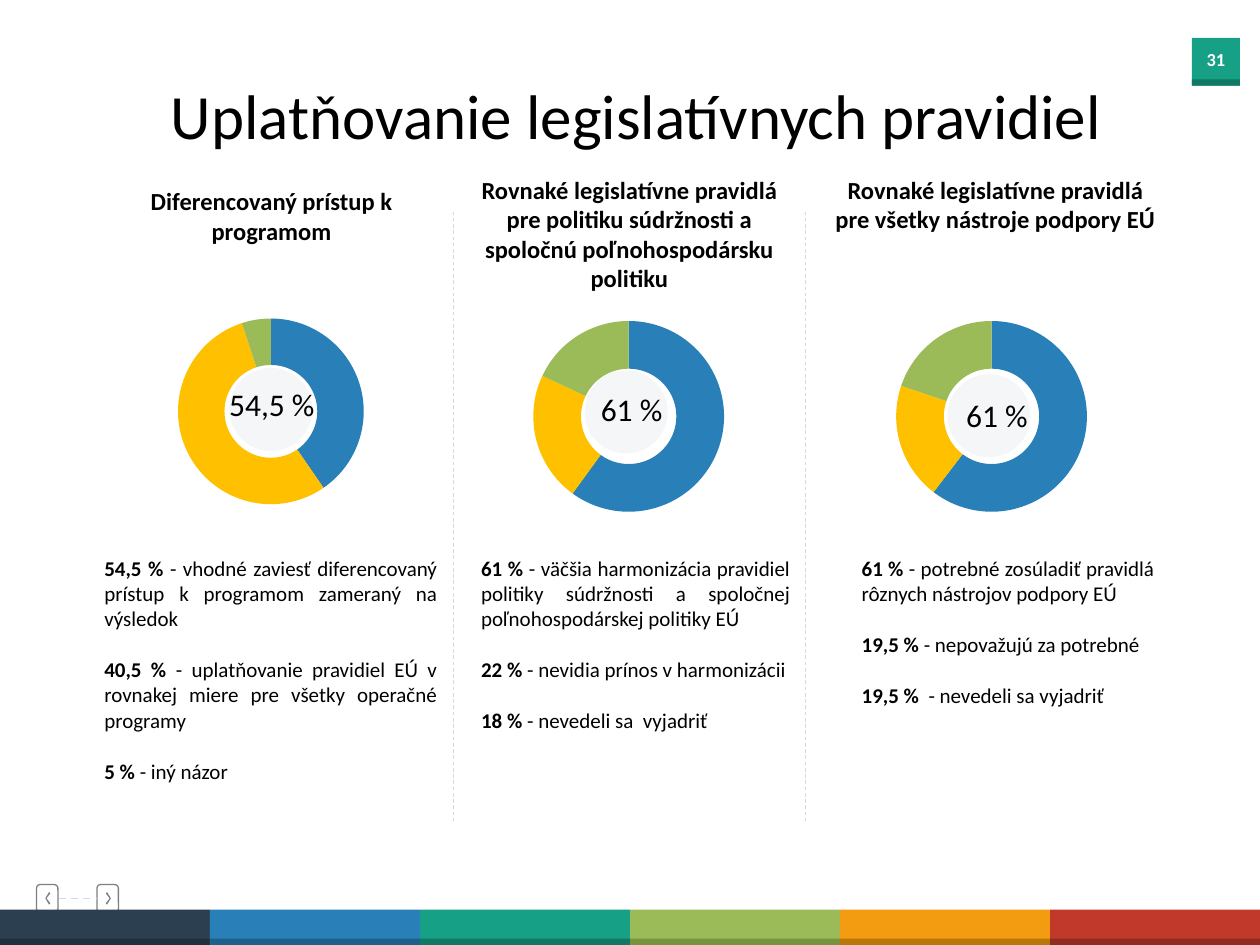
"""Build the slide on applying legislative rules: three doughnuts with findings."""
from lxml.etree import SubElement
from pptx import Presentation
from pptx.chart.data import CategoryChartData
from pptx.dml.color import RGBColor
from pptx.enum.chart import XL_CHART_TYPE
from pptx.enum.dml import MSO_LINE
from pptx.enum.shapes import MSO_CONNECTOR, MSO_SHAPE
from pptx.enum.text import MSO_ANCHOR, MSO_AUTO_SIZE, PP_ALIGN
from pptx.oxml.ns import qn
from pptx.util import Inches, Pt

BLACK = RGBColor(0x00, 0x00, 0x00)
WHITE = RGBColor(0xFF, 0xFF, 0xFF)
GREY = RGBColor(0x80, 0x80, 0x80)
PALE = RGBColor(0xD9, 0xD9, 0xD9)
SLATE = RGBColor(0x44, 0x54, 0x6A)
NAVY = RGBColor(0x2C, 0x3F, 0x50)
BLUE = RGBColor(0x29, 0x80, 0xB9)
TEAL = RGBColor(0x16, 0xA0, 0x85)
GREEN = RGBColor(0x9B, 0xBB, 0x59)
ORANGE = RGBColor(0xF3, 0x9C, 0x12)
RED = RGBColor(0xC0, 0x39, 0x2B)
YELLOW = RGBColor(0xFF, 0xC0, 0x00)
DARK_NAVY = RGBColor(0x21, 0x2F, 0x3C)
DARK_BLUE = RGBColor(0x1F, 0x60, 0x8B)
DARK_TEAL = RGBColor(0x10, 0x78, 0x64)
DARK_GREEN = RGBColor(0x77, 0x93, 0x3C)
DARK_ORANGE = RGBColor(0xBA, 0x76, 0x09)
DARK_RED = RGBColor(0x90, 0x2B, 0x20)

STRIPES = [(NAVY, DARK_NAVY), (BLUE, DARK_BLUE), (TEAL, DARK_TEAL),
           (GREEN, DARK_GREEN), (ORANGE, DARK_ORANGE), (RED, DARK_RED)]
CHEVRON = [(0.4, 7.09), (0.37, 7.13), (0.4, 7.17), (0.39, 7.18), (0.36, 7.13), (0.39, 7.08)]
DIVIDERS = [(3.6, 1.68, 3.6, 6.52, 0.5), (6.39, 1.68, 6.39, 6.52, 0.5),
            (0.47, 7.13, 0.77, 7.13, 1)]

COLUMNS = [
    {"heading": "Diferencovaný prístup k programom", "heading_box": (0.97, 1.43, 2.37, 0.57),
     "shares": (40, 54, 5), "chart_box": (1.2, 2.39, 1.9, 1.75),
     "disc_box": (1.82, 2.92, 0.66, 0.66),
     "label": "54,5 %", "label_box": (1.72, 3.01, 0.89, 0.4),
     "findings_box": (0.73, 4.36, 2.84, 1.92),
     "findings": [
         ("54,5 % ", "- vhodné zaviesť diferencovaný prístup k programom zameraný na výsledok"),
         ("40,5 % ", "- uplatňovanie pravidiel EÚ v rovnakej miere pre všetky operačné programy "),
         ("5 % ", "- iný názor")]},
    {"heading": "Rovnaké legislatívne pravidlá pre politiku súdržnosti a spoločnú "
                "poľnohospodársku politiku", "heading_box": (3.6, 1.34, 2.79, 0.81),
     "shares": (60, 22, 18), "chart_box": (4.05, 2.41, 1.88, 1.79),
     "disc_box": (4.64, 2.94, 0.66, 0.66),
     "label": "61 %", "label_box": (4.67, 3.05, 0.7, 0.4),
     "findings_box": (3.72, 4.36, 2.65, 1.51),
     "findings": [
         ("61 % ", "- väčšia harmonizácia pravidiel politiky súdržnosti a spoločnej "
                   "poľnohospodárskej politiky EÚ "),
         ("22 % ", "- nevidia prínos v harmonizácii"),
         ("18 % ", "- nevedeli sa  vyjadriť")]},
    {"heading": "Rovnaké legislatívne pravidlá pre všetky nástroje podpory EÚ",
     "heading_box": (6.48, 1.34, 2.84, 0.57),
     "shares": (61, 20, 20), "chart_box": (6.93, 2.41, 1.88, 1.79),
     "disc_box": (7.52, 2.97, 0.66, 0.66),
     "label": "61 %", "label_box": (7.57, 3.09, 0.7, 0.4),
     "findings_box": (6.74, 4.36, 2.52, 1.31),
     "findings": [
         ("61 % ", "- potrebné zosúladiť pravidlá rôznych nástrojov podpory EÚ"),
         ("19,5 % ", "- nepovažujú za potrebné"),
         ("19,5 % ", " - nevedeli sa vyjadriť")]},
]


def write(holder, paragraphs, size, align, color=BLACK, wrap=True):
    frame_format = {"word_wrap": wrap, "auto_size": MSO_AUTO_SIZE.NONE,
                    "vertical_anchor": MSO_ANCHOR.TOP}
    for name, value in frame_format.items():
        setattr(holder.text_frame, name, value)
    for index, runs in enumerate(paragraphs):
        frame = holder.text_frame
        paragraph = frame.add_paragraph() if index else frame.paragraphs[0]
        paragraph.alignment = align
        paragraph.space_before = Pt(14.65 if index else 0)
        for words, bold in runs:
            run = paragraph.add_run()
            run.text = words
            run.font.color.rgb = color
            for name, value in {"name": "Calibri", "size": Pt(size), "bold": bold}.items():
                setattr(run.font, name, value)


def paint(shape, color):
    shape.shadow.inherit = False
    shape.fill.solid()
    shape.fill.fore_color.rgb = color
    shape.line.fill.background()


deck = Presentation()
deck.slide_width, deck.slide_height = Inches(10), Inches(7.5)
slide = deck.slides.add_slide(deck.slide_layouts[5])
shapes = slide.shapes

title = shapes.title
title_place = {"left": 1.22, "top": 0.56, "width": 7.66, "height": 0.71}
for side, length in title_place.items():
    setattr(title, side, Inches(length))
write(title, [[("Uplatňovanie legislatívnych pravidiel", False)]], 36, PP_ALIGN.CENTER, wrap=False)

for top, height, color in [(0.3, 0.38, TEAL), (0.63, 0.05, DARK_TEAL)]:
    badge = shapes.add_shape(MSO_SHAPE.RECTANGLE, Inches(9.46), Inches(top),
                             Inches(0.38), Inches(height))
    paint(badge, color)
page_number = shapes.add_textbox(Inches(9.46), Inches(0.33), Inches(0.38), Inches(0.28))
write(page_number, [[("31", True)]], 10.5, PP_ALIGN.CENTER, WHITE, wrap=False)

for button_left, mirrored in [(0.29, False), (0.77, True)]:
    button = shapes.add_shape(MSO_SHAPE.ROUNDED_RECTANGLE, Inches(button_left), Inches(7.02),
                              Inches(0.17), Inches(0.22))
    button.shadow.inherit = False
    button.fill.background()
    button.line.color.rgb = GREY
    button.line.width = Pt(0.75)
    points = [(Inches(1.24 - x if mirrored else x), Inches(y)) for x, y in CHEVRON]
    outline = shapes.build_freeform(*points[0])
    outline.add_line_segments(points[1:], close=True)
    paint(outline.convert_to_shape(), GREY)

for x1, y1, x2, y2, weight in DIVIDERS:
    divider = shapes.add_connector(MSO_CONNECTOR.STRAIGHT, *map(Inches, (x1, y1, x2, y2)))
    divider.line.color.rgb = PALE
    divider.line.width = Pt(weight)
    divider.line.dash_style = MSO_LINE.DASH
    SubElement(divider._element.spPr, qn("a:effectLst"))

for column in COLUMNS:
    heading = shapes.add_textbox(*map(Inches, column["heading_box"]))
    write(heading, [[(column["heading"], True)]], 14, PP_ALIGN.CENTER)

    shares = CategoryChartData()
    shares.categories = ["1", "2", "3"]
    shares.add_series("Series 1", column["shares"])
    chart = shapes.add_chart(XL_CHART_TYPE.DOUGHNUT, *map(Inches, column["chart_box"]),
                             shares).chart
    chart.has_title = chart.has_legend = False
    chart.font.name, chart.font.size = "Calibri", Pt(10)
    chart.font.color.rgb = BLACK
    ring = chart.plots[0]
    ring.vary_by_categories = True
    ring._element.find(qn("c:holeSize")).set("val", "84")
    for index, color in enumerate((BLUE, YELLOW, GREEN)):
        segment = ring.series[0].points[index].format
        segment.fill.solid()
        segment.fill.fore_color.rgb = color
        segment.line.fill.background()

    disc = shapes.add_shape(MSO_SHAPE.OVAL, *map(Inches, column["disc_box"]))
    paint(disc, SLATE)
    tint = disc._element.spPr.find(qn("a:solidFill")).find(qn("a:srgbClr"))
    SubElement(tint, qn("a:alpha")).set("val", "5000")
    label = shapes.add_textbox(*map(Inches, column["label_box"]))
    write(label, [[(column["label"], False)]], 18, PP_ALIGN.LEFT, wrap=False)

    findings = shapes.add_textbox(*map(Inches, column["findings_box"]))
    write(findings, [[(share, True), (finding, False)] for share, finding in column["findings"]],
          12, PP_ALIGN.JUSTIFY)

stripe_width = deck.slide_width / len(STRIPES)
for index, (color, shade) in enumerate(STRIPES):
    for top, height, tone in [(7.22, 0.26, color), (7.45, 0.05, shade)]:
        stripe = shapes.add_shape(MSO_SHAPE.RECTANGLE, int(index * stripe_width), Inches(top),
                                  int(stripe_width), Inches(height))
        paint(stripe, tone)

deck.save("out.pptx")
